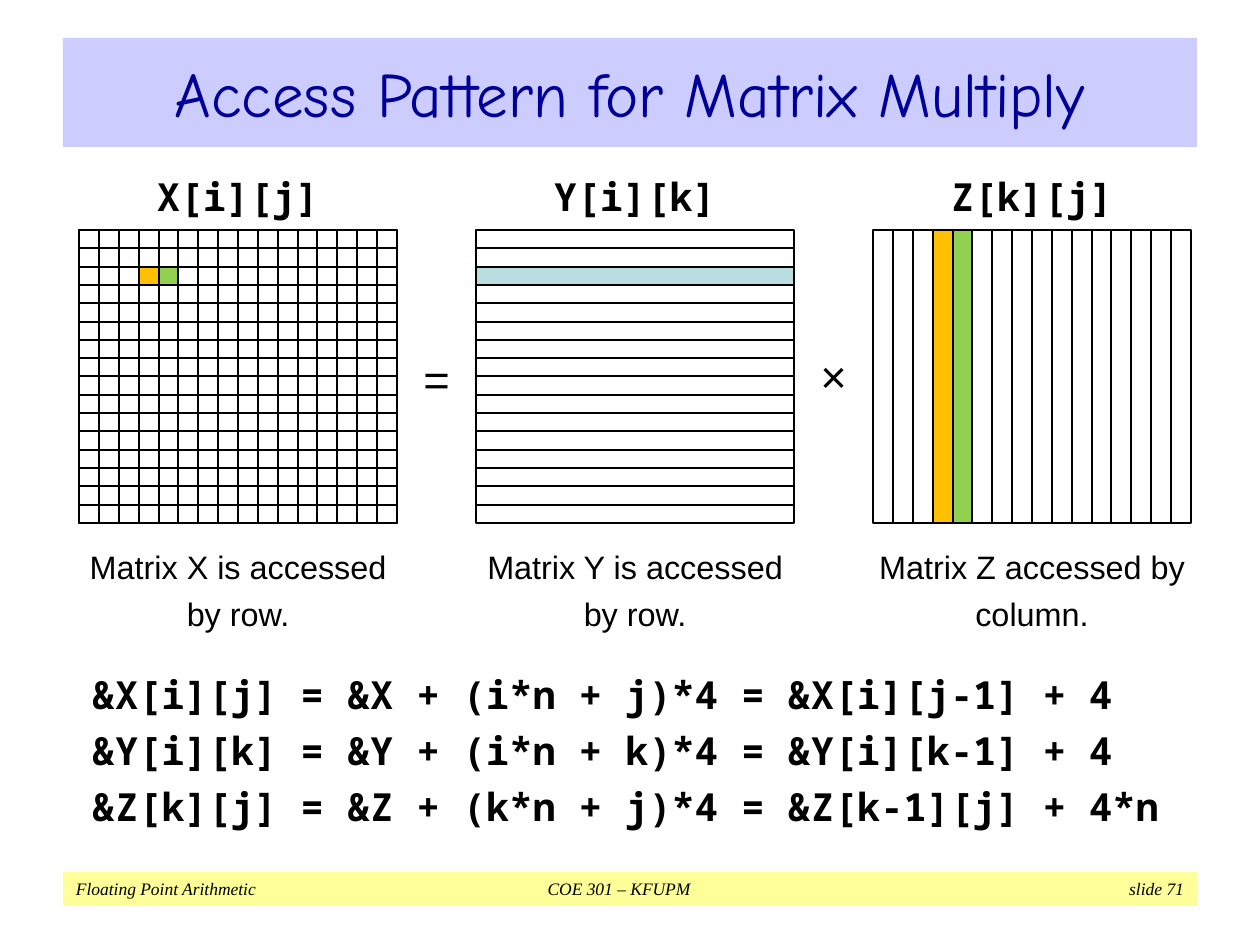
from dataclasses import dataclass
from typing import Optional

from lxml.etree import SubElement
from pptx import Presentation
from pptx.dml.color import RGBColor as RGB
from pptx.enum.shapes import MSO_SHAPE as Shape
from pptx.enum.text import MSO_ANCHOR as Anchor, PP_ALIGN as Align
from pptx.oxml.ns import qn
from pptx.util import Emu, Pt

EMU_PER_PX = 914400 / 126


@dataclass(frozen=True)
class Theme:
    ink: str = "000000"
    title_ink: str = "000099"
    title_band: str = "CCCCFF"
    footer_band: str = "FFFF99"
    white: str = "FFFFFF"
    row: str = "BADDE1"
    first: str = "FFC000"
    second: str = "92D050"
    sans: str = "Arial"
    mono: str = "Noto Sans Mono"
    title_font: str = "Comic Neue"
    footer_font: str = "Times New Roman"
    title_size: float = 36
    sign_size: float = 25.9
    code_size: float = 22.1
    caption_size: float = 18.5
    footer_size: float = 10


T = Theme()


@dataclass(frozen=True)
class Box:
    x: int
    y: int
    w: int
    h: int


@dataclass(frozen=True)
class Style:
    font: str
    size: float
    color: str = T.ink
    bold: bool = False
    italic: bool = False
    align: Align = Align.CENTER
    anchor: Anchor = Anchor.MIDDLE
    spacing: float = 1.2
    before: float = 0
    inset: tuple[int, int] = (0, 0)


@dataclass(frozen=True)
class Matrix:
    x: int
    label: str
    caption: str
    rows: Optional[dict[int, str]] = None
    cols: Optional[dict[int, str]] = None


@dataclass(frozen=True)
class Sign:
    text: str
    x: int
    y: int


N, TOP, WIDTH, HEIGHT = 16, 230, 318, 293
INSET = (13, 6)
TITLE = Style(T.title_font, T.title_size, T.title_ink, spacing=1, inset=INSET)
FOOTER = Style(T.footer_font, T.footer_size, italic=True, align=Align.LEFT,
               anchor=Anchor.TOP, spacing=1, inset=INSET)
LABEL = Style(T.mono, T.code_size, bold=True)
SIGN = Style(T.sans, T.sign_size)
CAPTION = Style(T.sans, T.caption_size)
CODE = Style(T.mono, T.code_size, bold=True, align=Align.LEFT,
             anchor=Anchor.TOP, spacing=1, before=5.3, inset=INSET)

MATRICES = (
    Matrix(79, "X[i][j]", "Matrix X is accessed by row.", rows={}, cols={}),
    Matrix(476, "Y[i][k]", "Matrix Y is accessed by row.", rows={2: T.row}),
    Matrix(873, "Z[k][j]", "Matrix Z accessed by column.",
           cols={3: T.first, 4: T.second}),
)
SIGNS = (Sign("=", 397, 344), Sign("×", 794, 341))
X_CELLS = {3: T.first, 4: T.second}
X_ROW = 2
FORMULAS = (
    "&X[i][j] = &X + (i*n + j)*4 = &X[i][j-1] + 4",
    "&Y[i][k] = &Y + (i*n + k)*4 = &Y[i][k-1] + 4",
    "&Z[k][j] = &Z + (k*n + j)*4 = &Z[k-1][j] + 4*n",
)
FOOTER_TEXT = "Floating Point Arithmetic\tCOE 301 – KFUPM\tslide 71"
FOOTER_TABS = ((543, "ctr"), (1108, "r"))


def px(n: float) -> Emu:
    return Emu(round(n * EMU_PER_PX))


def place(b: Box) -> tuple[Emu, ...]:
    return px(b.x), px(b.y), px(b.w), px(b.h)


def apply(target, values: dict) -> None:
    for name, value in values.items():
        setattr(target, name, value)


def add_rect(s, b: Box, fill: Optional[str], line: Optional[str] = None):
    sp = s.shapes.add_shape(Shape.RECTANGLE, *place(b))
    sp.shadow.inherit = False
    if fill:
        sp.fill.solid()
        sp.fill.fore_color.rgb = RGB.from_string(fill)
    else:
        sp.fill.background()
    if line:
        sp.line.color.rgb = RGB.from_string(line)
        sp.line.width = Pt(1)
    else:
        sp.line.fill.background()
    return sp


def write(sp, lines: tuple[str, ...], st: Style) -> None:
    tf = sp.text_frame
    side, end = map(px, st.inset)
    apply(tf, {"word_wrap": True, "vertical_anchor": st.anchor,
               "margin_left": side, "margin_right": side,
               "margin_top": end, "margin_bottom": end})
    for i, line in enumerate(lines):
        p = tf.add_paragraph() if i else tf.paragraphs[0]
        apply(p, {"alignment": st.align, "line_spacing": st.spacing,
                  "space_before": Pt(st.before if i else 0)})
        r = p.add_run()
        r.text = line
        apply(r.font, {"name": st.font, "size": Pt(st.size),
                       "bold": st.bold, "italic": st.italic})
        r.font.color.rgb = RGB.from_string(st.color)


def add_text(s, b: Box, lines: tuple[str, ...], st: Style) -> None:
    write(s.shapes.add_textbox(*place(b)), lines, st)


def add_tabs(p, tabs: tuple[tuple[int, str], ...]) -> None:
    tab_list = SubElement(p._p.get_or_add_pPr(), qn("a:tabLst"))
    for pos, align in tabs:
        SubElement(tab_list, qn("a:tab"), pos=str(px(pos)), algn=align)


def edge(i: int, length: int) -> int:
    return round(i * length / N)


def cell(x: int, row: Optional[int], col: Optional[int]) -> Box:
    x0, x1 = (0, WIDTH) if col is None else (edge(col, WIDTH), edge(col + 1, WIDTH))
    y0, y1 = (0, HEIGHT) if row is None else (edge(row, HEIGHT), edge(row + 1, HEIGHT))
    return Box(x + x0, TOP + y0, x1 - x0, y1 - y0)


def add_matrix(s, m: Matrix) -> None:
    for i in range(N):
        if m.rows is not None:
            add_rect(s, cell(m.x, i, None), m.rows.get(i), T.ink)
    for i in range(N):
        if m.cols is not None:
            add_rect(s, cell(m.x, None, i), m.cols.get(i), T.ink)
    add_text(s, Box(m.x, 162, WIDTH, 58), (m.label,), LABEL)
    add_text(s, Box(m.x, 532, WIDTH, 109), (m.caption,), CAPTION)


def main() -> None:
    prs = Presentation()
    apply(prs, {"slide_width": px(1260), "slide_height": px(945)})
    s = prs.slides.add_slide(prs.slide_layouts[6])
    s.background.fill.solid()
    s.background.fill.fore_color.rgb = RGB.from_string(T.white)

    footer = add_rect(s, Box(63, 872, 1134, 34), T.footer_band)
    write(footer, (FOOTER_TEXT,), FOOTER)
    add_tabs(footer.text_frame.paragraphs[0], FOOTER_TABS)
    title = add_rect(s, Box(63, 38, 1134, 109), T.title_band)
    write(title, ("Access Pattern for Matrix Multiply",), TITLE)

    for m in MATRICES:
        add_matrix(s, m)
    for col, fill in X_CELLS.items():
        add_rect(s, cell(MATRICES[0].x, X_ROW, col), fill, T.ink)
    for sign in SIGNS:
        add_text(s, Box(sign.x, sign.y, 79, 58), (sign.text,), SIGN)
    add_text(s, Box(79, 665, 1111, 197), FORMULAS, CODE)
    prs.save("out.pptx")


if __name__ == "__main__":
    main()
